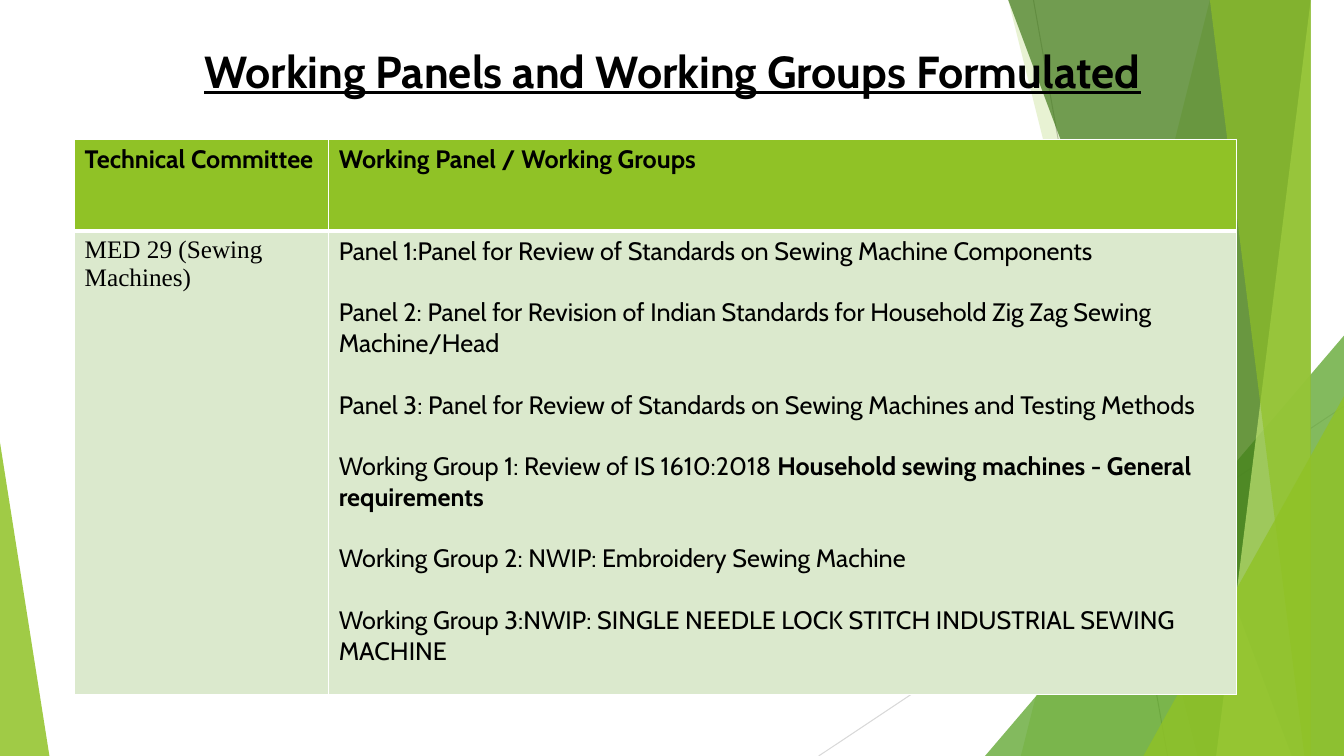
from lxml import etree
from pptx import Presentation
from pptx.dml.color import RGBColor
from pptx.enum.shapes import MSO_CONNECTOR, MSO_SHAPE
from pptx.enum.text import MSO_ANCHOR, PP_ALIGN
from pptx.oxml.ns import qn
from pptx.util import Inches, Pt

WHITE = RGBColor(0xFF, 0xFF, 0xFF)
BLACK = RGBColor(0x00, 0x00, 0x00)
GREY = RGBColor(0xBF, 0xBF, 0xBF)
PALE_GREY = RGBColor(0xD9, 0xD9, 0xD9)
LIME = RGBColor(0x90, 0xC2, 0x26)
LEAF = RGBColor(0x54, 0xA0, 0x21)
FOREST = RGBColor(0x3F, 0x78, 0x19)
LIGHT_LIME = RGBColor(0xC0, 0xE4, 0x74)
MINT = RGBColor(0xDB, 0xE9, 0xCD)

WIDTH, HEIGHT = 13.33, 7.5
FONT = "Cabin"
HEADERS = ["Technical Committee", "Working Panel / Working Groups"]
COMMITTEE = "MED 29 (Sewing Machines)"
PANELS = [
    ("Panel 1:Panel for Review of Standards on Sewing Machine Components", ""),
    ("Panel 2: Panel for Revision of Indian Standards for Household Zig Zag Sewing Machine/Head", ""),
    ("Panel 3: Panel for Review of Standards on Sewing Machines and Testing Methods", ""),
    ("Working Group 1: Review of IS 1610:2018 ", "Household sewing machines - General requirements"),
    ("Working Group 2: NWIP: Embroidery Sewing Machine", ""),
    ("Working Group 3:NWIP: SINGLE NEEDLE LOCK STITCH INDUSTRIAL SEWING MACHINE", ""),
]


def paint(sp, color, opacity):
    sp.shadow.inherit = False
    sp.line.fill.background()
    sp.fill.solid()
    sp.fill.fore_color.rgb = color
    clr = sp.fill._xPr.find(qn("a:solidFill"))[0]
    etree.SubElement(clr, qn("a:alpha"), val=str(opacity * 1000))


def add_line(slide, x1, y1, x2, y2, color):
    line = slide.shapes.add_connector(
        MSO_CONNECTOR.STRAIGHT, Inches(x1), Inches(y1), Inches(x2), Inches(y2))
    line.line.color.rgb = color
    line.line.width = Pt(0.75)
    etree.SubElement(line._element.spPr, qn("a:effectLst"))


def add_facet(slide, right, top, bottom, top_inset, bottom_inset, color, opacity):
    builder = slide.shapes.build_freeform(
        right - top_inset, top, scale=Inches(1))
    builder.add_line_segments(
        [(right, top), (right, bottom), (right - bottom_inset, bottom)], close=True)
    paint(builder.convert_to_shape(), color, opacity)


def add_triangle(slide, left, bottom, width, height, apex, color, opacity):
    sp = slide.shapes.add_shape(
        MSO_SHAPE.ISOSCELES_TRIANGLE, Inches(left), Inches(bottom - height),
        Inches(width), Inches(height))
    sp.adjustments[0] = apex
    paint(sp, color, opacity)


def add_backdrop(slide, left, top, width, height):
    right, bottom = left + width, top + height
    add_line(slide, right - 3.08, top, right - 1.75, bottom, GREY)
    add_line(slide, right, top + 4.03, right - 5.21, bottom, PALE_GREY)
    facets = [
        (1.05, 3.29, LIME, 30),
        (2.83, 1.5, LIME, 20),
        (3.12, 0.42, FOREST, 70),
        (0.3, 1.41, LIGHT_LIME, 70),
        (1.37, 0.15, LIME, 65),
    ]
    for facet in facets[:2]:
        add_facet(slide, right, top, bottom, *facet)
    add_triangle(slide, right - 3.56, bottom, 3.56, 4.17, 1, LEAF, 72)
    for facet in facets[2:]:
        add_facet(slide, right, top, bottom, *facet)
    add_triangle(slide, right - 1.99, bottom, 1.99, 3.57, 1, LIME, 80)
    add_triangle(slide, left, bottom, 0.49, 3.11, 0, LIME, 85)


def add_title(slide, left, top, width, height):
    box = slide.shapes.add_textbox(
        Inches(left), Inches(top), Inches(width), Inches(height))
    tf = box.text_frame
    tf.word_wrap = True
    tf.vertical_anchor = MSO_ANCHOR.TOP
    p = tf.paragraphs[0]
    p.text = "Working Panels and Working Groups Formulated"
    p.alignment = PP_ALIGN.CENTER
    style(p, FONT, 32, True)
    p.font.underline = True


def style(p, font, size, bold):
    p.font.name = font
    p.font.size = Pt(size)
    p.font.bold = bold
    p.font.color.rgb = BLACK


def format_cell(cell, fill, top_border, bottom_border):
    tcPr = cell._tc.get_or_add_tcPr()
    borders = {"a:lnL": 1, "a:lnR": 1, "a:lnT": top_border, "a:lnB": bottom_border}
    for tag, width in borders.items():
        ln = etree.SubElement(tcPr, qn(tag), w=str(Pt(width)))
        solid = etree.SubElement(ln, qn("a:solidFill"))
        etree.SubElement(solid, qn("a:srgbClr"), val=str(WHITE))
    cell.fill.solid()
    cell.fill.fore_color.rgb = fill


def add_panel_table(slide, left, top, width, height):
    table = slide.shapes.add_table(
        2, 2, Inches(left), Inches(top), Inches(width), Inches(height)).table
    table.horz_banding = False
    table.columns[0].width = Inches(2.52)
    table.columns[1].width = Inches(width - 2.52)
    table.rows[0].height = Inches(0.91)
    table.rows[1].height = Inches(height - 0.91)

    for col, header in enumerate(HEADERS):
        cell = table.cell(0, col)
        format_cell(cell, LIME, 1, 3)
        format_cell(table.cell(1, col), MINT, 3, 1)
        p = cell.text_frame.paragraphs[0]
        p.text = header
        style(p, FONT, 18, True)

    p = table.cell(1, 0).text_frame.paragraphs[0]
    p.text = COMMITTEE
    style(p, "Times New Roman", 18, False)

    tf = table.cell(1, 1).text_frame
    for i, (text, emphasis) in enumerate(PANELS):
        p = tf.add_paragraph() if i else tf.paragraphs[0]
        style(p, FONT, 18, False)
        if i:
            p.space_before = Pt(22)
        p.add_run().text = text
        if emphasis:
            r = p.add_run()
            r.text = emphasis
            r.font.bold = True


def main():
    prs = Presentation()
    prs.slide_width = Inches(WIDTH)
    prs.slide_height = Inches(HEIGHT)
    slide = prs.slides.add_slide(prs.slide_layouts[6])
    slide.background.fill.solid()
    slide.background.fill.fore_color.rgb = WHITE
    add_backdrop(slide, 0, 0, WIDTH, HEIGHT)
    add_title(slide, 0.38, 0.38, 12.58, 1.44)
    add_panel_table(slide, 0.74, 1.38, 11.52, 5.51)
    prs.save("out.pptx")


if __name__ == "__main__":
    main()
